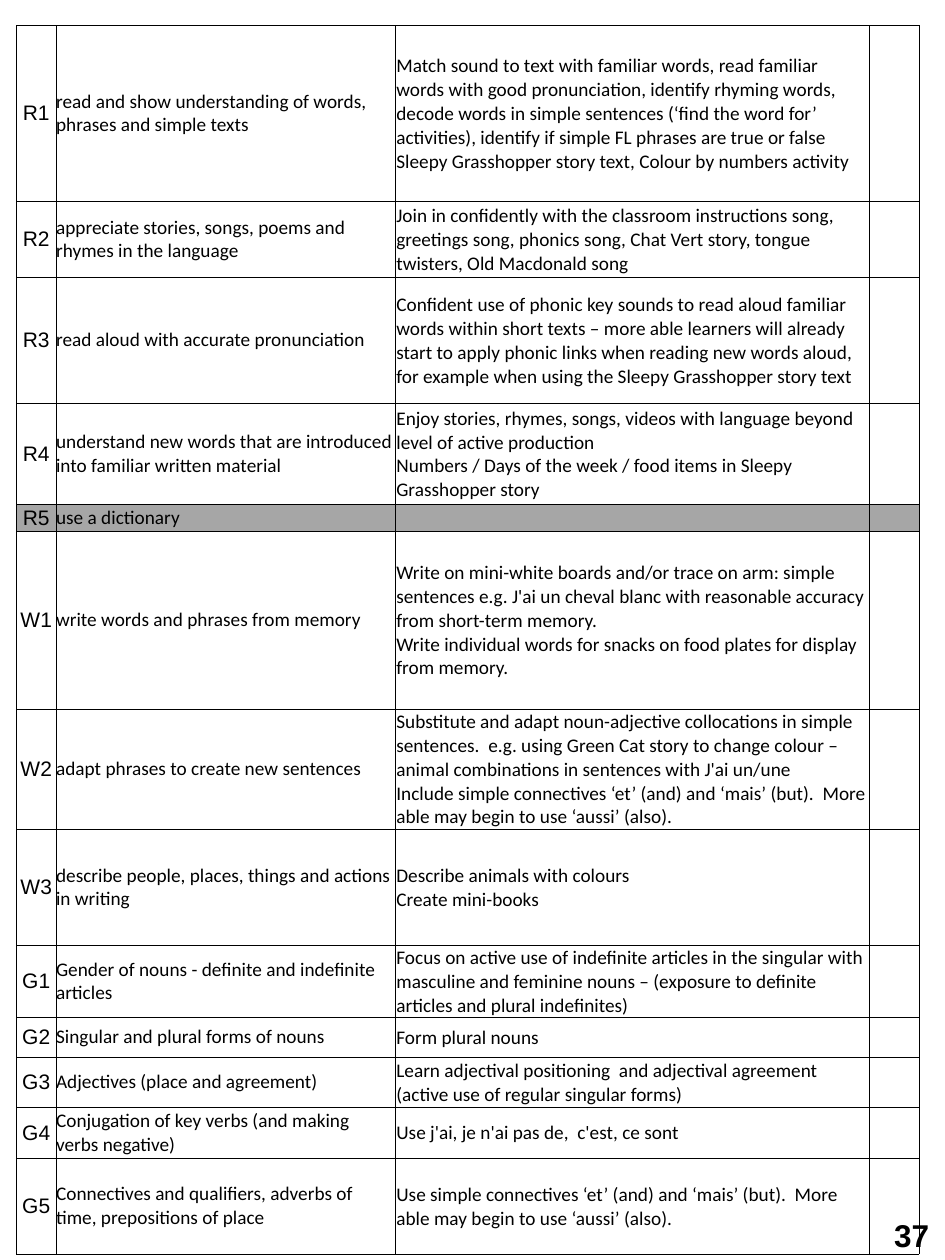
import pptx
import pptx.dml.color
import pptx.enum.shapes
import pptx.enum.text
import pptx.oxml.ns
import pptx.util
from lxml import etree
from pptx.util import Cm

BLACK = "000000"
GREY = "A6A6A6"
WIDTHS = [0.8, 6.84, 9.56, 1]
HIGH = 24.69

# Least height in cm, code, skill, activities
ROWS = [
    (3.55, "R1", "read and show understanding of words, phrases and simple texts",
     "Match sound to text with familiar words, read familiar words with good "
     "pronunciation, identify rhyming words, decode words in simple sentences "
     "(‘find the word for’ activities), identify if simple FL phrases are true or false\v"
     "Sleepy Grasshopper story text, Colour by numbers activity"),
    (1.53, "R2", "appreciate stories, songs, poems and rhymes in the language",
     "Join in confidently with the classroom instructions song, greetings song, "
     "phonics song, Chat Vert story, tongue twisters, Old Macdonald song"),
    (2.54, "R3", "read aloud with accurate pronunciation",
     "Confident use of phonic key sounds to read aloud familiar words within short "
     "texts – more able learners will already start to apply phonic links when reading "
     "new words aloud, for example when using the Sleepy Grasshopper story text"),
    (2.04, "R4", "understand new words that are introduced into familiar written material",
     "Enjoy stories, rhymes, songs, videos with language beyond level of active production\v"
     "Numbers / Days of the week / food items in Sleepy Grasshopper story"),
    (0.54, "R5", "use a dictionary", ""),
    (3.59, "W1", "write words and phrases from memory",
     "Write on mini-white boards and/or trace on arm: simple sentences e.g. J'ai un "
     "cheval blanc with reasonable accuracy from short-term memory.\v"
     "Write individual words for snacks on food plates for display from memory."),
    (2.21, "W2", "adapt phrases to create new sentences",
     "Substitute and adapt noun-adjective collocations in simple sentences.  e.g. using "
     "Green Cat story to change colour – animal combinations in sentences with J'ai un/une\v"
     "Include simple connectives ‘et’ (and) and ‘mais’ (but).  More able may begin to "
     "use ‘aussi’ (also)."),
    (2.34, "W3", "describe people, places, things and actions in writing",
     "Describe animals with colours\vCreate mini-books"),
    (0.91, "G1", "Gender of nouns - definite and indefinite articles",
     "Focus on active use of indefinite articles in the singular with masculine and "
     "feminine nouns – (exposure to definite articles and plural indefinites)"),
    (0.79, "G2", "Singular and plural forms of nouns", "Form plural nouns"),
    (1.02, "G3", "Adjectives (place and agreement)",
     "Learn adjectival positioning  and adjectival agreement (active use of regular "
     "singular forms)"),
    (1.02, "G4", "Conjugation of key verbs (and making verbs negative)",
     "Use j'ai, je n'ai pas de,  c'est, ce sont"),
    (1.94, "G5", "Connectives and qualifiers, adverbs of time, prepositions of place",
     "Use simple connectives ‘et’ (and) and ‘mais’ (but).  More able may begin to use "
     "‘aussi’ (also)."),
]


def color(code):
    return pptx.dml.color.RGBColor.from_string(code)


def style(para, name, size, bold=False, center=False):
    para.font.name = name
    para.font.size = pptx.util.Pt(size)
    para.font.bold = bold
    para.font.color.rgb = color(BLACK)
    if center:
        para.alignment = pptx.enum.text.PP_ALIGN.CENTER


def add_node(parent, tag, **attrs):
    return etree.SubElement(parent, pptx.oxml.ns.qn(tag), **attrs)


def border(cell):
    props = cell._tc.get_or_add_tcPr()
    for side in ("a:lnL", "a:lnR", "a:lnT", "a:lnB"):
        line = add_node(props, side, w=str(pptx.util.Pt(0.25)))
        add_node(add_node(line, "a:solidFill"), "a:srgbClr", val=BLACK)


def fill_cell(cell, text, col, shade):
    inset = Cm(0.02) if col == 2 else 0
    cell.margin_left = cell.margin_right = cell.margin_top = inset
    cell.margin_bottom = 0
    cell.vertical_anchor = pptx.enum.text.MSO_ANCHOR.MIDDLE
    border(cell)
    if shade:
        cell.fill.solid()
        cell.fill.fore_color.rgb = color(shade)
    else:
        cell.fill.background()
    cell.text_frame.text = text
    para = cell.text_frame.paragraphs[0]
    if col == 0:
        style(para, "Arial", 12, center=True)
    else:
        style(para, "Calibri", 11)
    if not text:
        # An empty cell takes its line height from the end mark
        add_node(para._p, "a:endParaRPr", sz="1100")


def add_grid(slide):
    frame = slide.shapes.add_table(len(ROWS), len(WIDTHS), Cm(0.33), Cm(0.51),
                                   Cm(sum(WIDTHS)), Cm(HIGH))
    table = frame.table
    table.first_row = table.horz_banding = False
    for col, width in zip(table.columns, WIDTHS):
        col.width = Cm(width)
    for row, (height, *texts) in zip(table.rows, ROWS):
        row.height = Cm(height)
        shade = GREY if texts[0] == "R5" else None
        for col, text in enumerate(texts + [""]):
            fill_cell(row.cells[col], text, col, shade)
    # Rows grow to fit their text, so the frame is taller than their sum
    frame.height = Cm(HIGH)


def add_page(slide, text):
    kind = pptx.enum.shapes.MSO_SHAPE.ROUNDED_RECTANGLE
    box = slide.shapes.add_shape(kind, Cm(17.68), Cm(24.31), Cm(1.4), Cm(1.19))
    box.shadow.inherit = False
    box.fill.background()
    box.line.fill.background()
    box.text_frame.text = text
    box.text_frame.vertical_anchor = pptx.enum.text.MSO_ANCHOR.MIDDLE
    style(box.text_frame.paragraphs[0], "Arial", 18, bold=True, center=True)


def main():
    deck = pptx.Presentation()
    deck.slide_width, deck.slide_height = Cm(19.05), Cm(25.4)
    slide = deck.slides.add_slide(deck.slide_layouts[6])
    add_grid(slide)
    add_page(slide, "37")
    deck.save("out.pptx")


if __name__ == "__main__":
    main()
